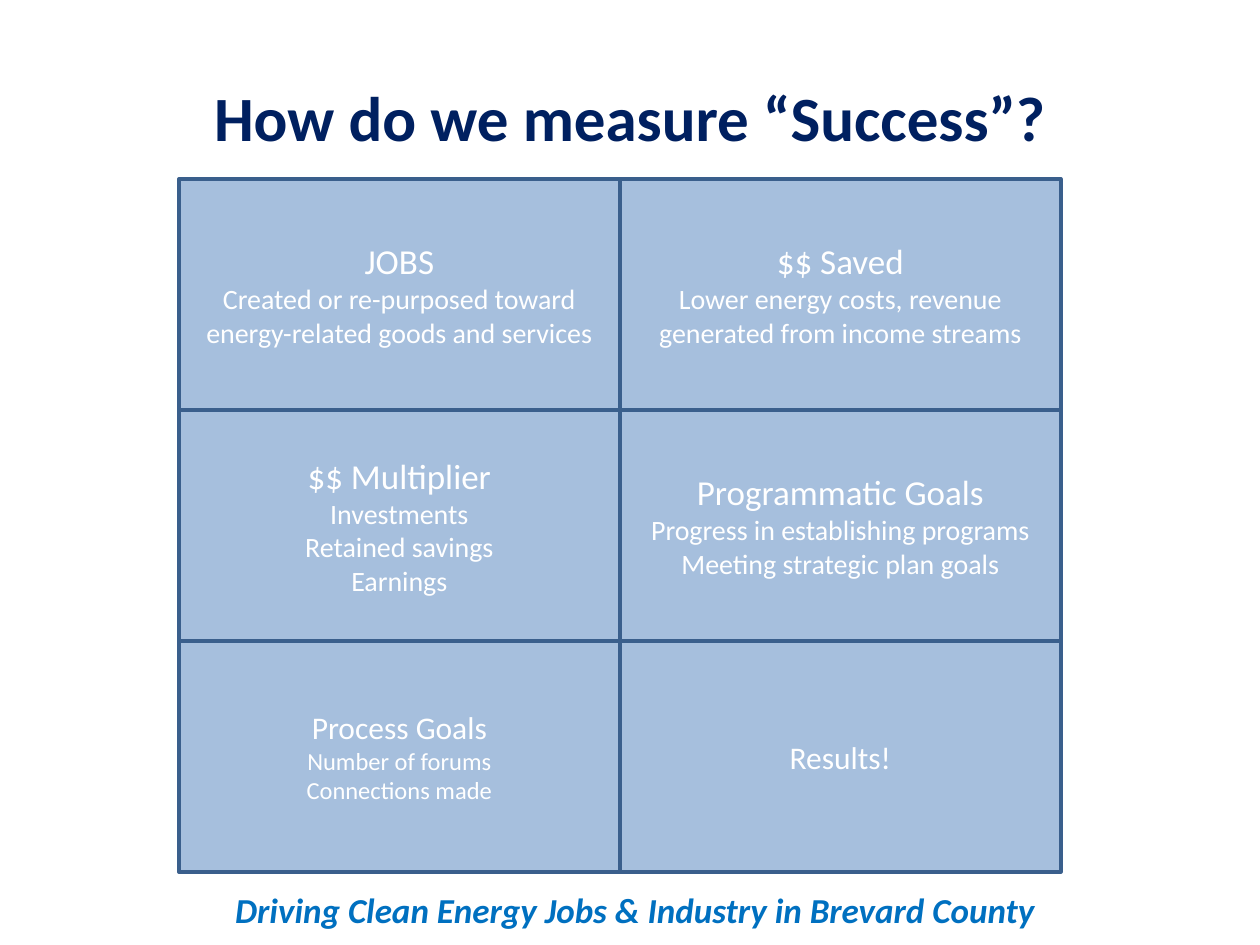
from dataclasses import dataclass

from lxml.etree import SubElement
from pptx import Presentation
from pptx.dml.color import RGBColor as Rgb
from pptx.enum.shapes import MSO_SHAPE as Shape
from pptx.enum.text import MSO_ANCHOR as Anchor, PP_ALIGN as Align
from pptx.oxml.ns import qn
from pptx.util import Inches, Pt


@dataclass(frozen=True)
class Theme:
    font: str = "Calibri"
    title: str = "002060"
    tagline: str = "0070C0"
    cell: str = "4F81BD"
    border: str = "3A5F8C"
    cell_text: str = "FFFFFF"
    cell_opacity: int = 50
    border_width: float = 2
    title_size: int = 36
    tagline_size: int = 20
    detail_step: int = 4  # points by which details are smaller than headings


THEME = Theme()
COLUMNS = 2

# Heading size, heading, details
MEASURES = [
    (20, "JOBS", ["Created or re-purposed toward energy-related goods and services"]),
    (20, "$$ Saved", ["Lower energy costs, revenue generated from income streams"]),
    (20, "$$ Multiplier", ["Investments", "Retained savings", "Earnings"]),
    (20, "Programmatic Goals",
     ["Progress in establishing programs", "Meeting strategic plan goals"]),
    (18, "Process Goals", ["Number of forums", "Connections made"]),
    (18, "Results!", []),
]


def write(paragraph, text, *, size, color, bold=False, italic=False):
    paragraph.alignment = Align.CENTER
    run = paragraph.add_run()
    run.text = text
    font = run.font
    font.name, font.size = THEME.font, Pt(size)
    font.bold, font.italic = bold, italic
    font.color.rgb = Rgb.from_string(color)


def add_title(slide, box):
    title = slide.shapes.title
    title.left, title.top, title.width, title.height = map(Inches, box)
    title.text_frame.vertical_anchor = Anchor.MIDDLE
    write(title.text_frame.paragraphs[0], "How do we measure “Success”?",
          size=THEME.title_size, color=THEME.title, bold=True)


def add_measure(slide, box, size, heading, details):
    cell = slide.shapes.add_shape(Shape.RECTANGLE, *map(Inches, box))
    cell.shadow.inherit = False
    cell.fill.solid()
    cell.fill.fore_color.rgb = Rgb.from_string(THEME.cell)
    # Translucent fill
    color = cell.fill._xPr.find(qn("a:solidFill"))[0]
    SubElement(color, qn("a:alpha"), val=str(THEME.cell_opacity * 1000))
    cell.line.color.rgb = Rgb.from_string(THEME.border)
    cell.line.width = Pt(THEME.border_width)

    frame = cell.text_frame
    frame.word_wrap = True
    frame.vertical_anchor = Anchor.MIDDLE
    write(frame.paragraphs[0], heading, size=size, color=THEME.cell_text)
    for detail in details:
        write(frame.add_paragraph(), detail,
              size=size - THEME.detail_step, color=THEME.cell_text)


def add_measure_grid(slide, box):
    left, top, width, height = box
    cell_width = width / COLUMNS
    cell_height = height / (len(MEASURES) // COLUMNS)
    for index, measure in enumerate(MEASURES):
        row, column = divmod(index, COLUMNS)
        cell_box = (left + column * cell_width, top + row * cell_height,
                    cell_width, cell_height)
        add_measure(slide, cell_box, *measure)


def add_tagline(slide, box):
    frame = slide.shapes.add_textbox(*map(Inches, box)).text_frame
    frame.word_wrap = True
    write(frame.paragraphs[0],
          "Driving Clean Energy Jobs & Industry in Brevard County",
          size=THEME.tagline_size, color=THEME.tagline, bold=True, italic=True)


def main():
    deck = Presentation()
    deck.slide_width, deck.slide_height = Inches(10), Inches(7.5)
    slide = deck.slides.add_slide(deck.slide_layouts.get_by_name("Title Only"))
    add_tagline(slide, (0.5, 7, 9.08, 0.44))
    add_title(slide, (0.5, 0.3, 9, 1.25))
    add_measure_grid(slide, (1.42, 1.42, 7, 5.5))
    deck.save("out.pptx")


if __name__ == "__main__":
    main()
